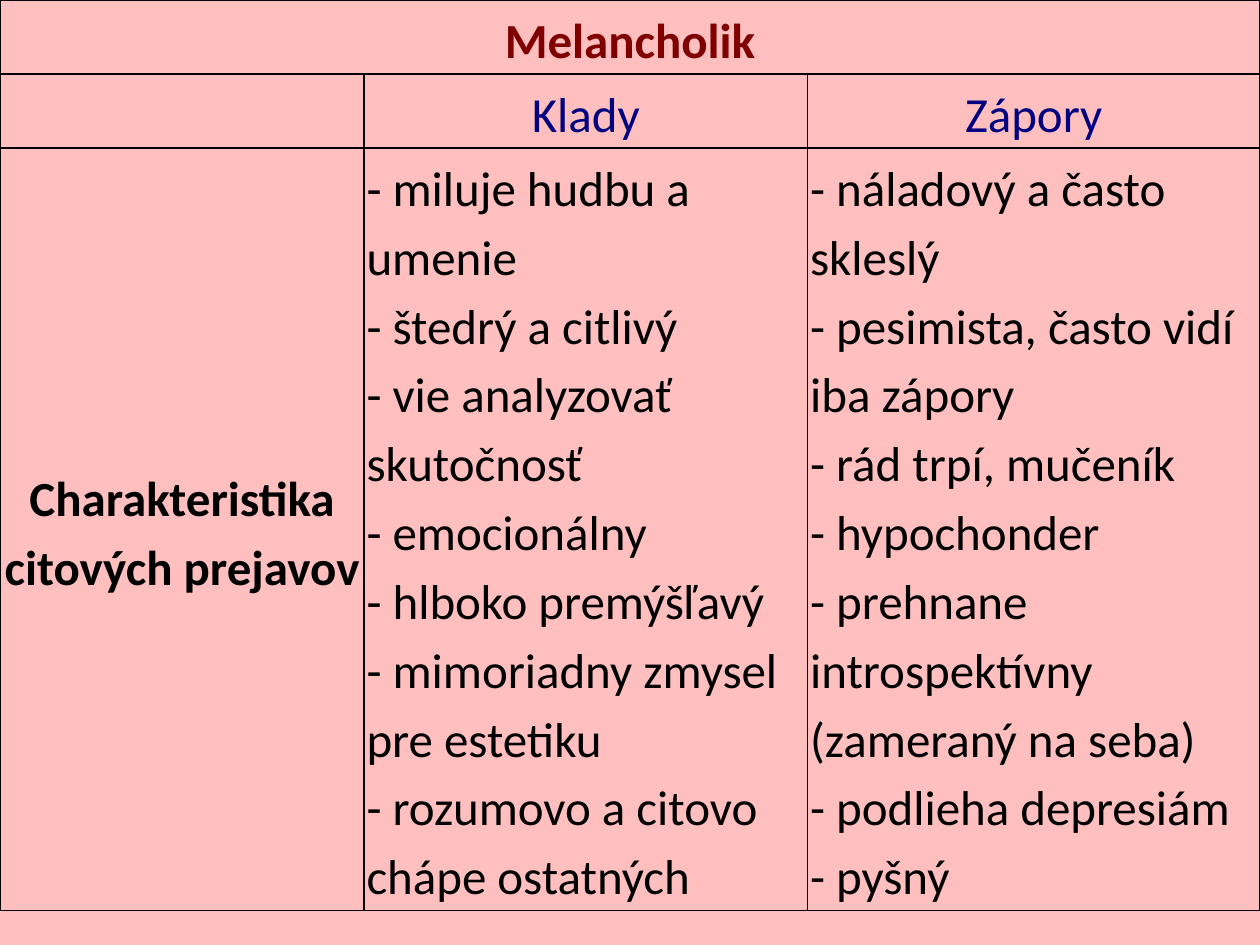
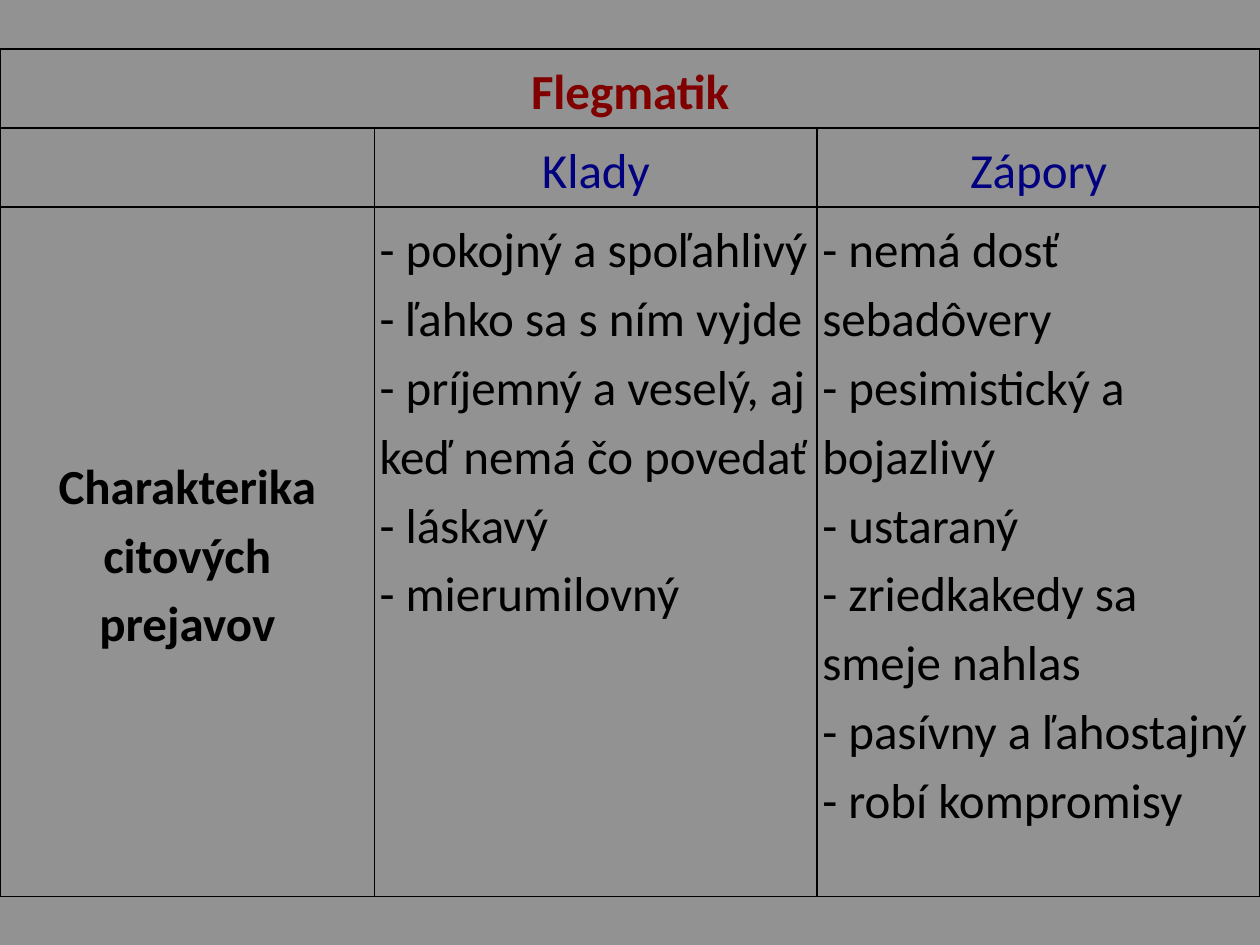
from dataclasses import dataclass

from pptx import Presentation
from pptx.dml.color import RGBColor
from pptx.enum.text import MSO_ANCHOR, PP_ALIGN
from pptx.oxml import parse_xml
from pptx.oxml.ns import nsdecls
from pptx.util import Pt


@dataclass(frozen=True)
class Theme:
    font: str = "Calibri"
    size: int = 28
    title: str = "800000"
    head: str = "000080"
    ink: str = "000000"
    line: int = 1
    space: float = 1.15


@dataclass(frozen=True)
class Temper:
    """One temperament: its table text, geometry in points and backdrop."""
    name: str
    label: str
    pros: list[str]
    cons: list[str]
    back: str
    top: float
    inset: float
    cols: tuple[float, ...]
    rows: tuple[float, ...]


THEME = Theme()
WIDE, HIGH = 720, 540

TEMPERS = [
    Temper(
        "Melancholik", "Charakteristika citových prejavov",
        ["miluje hudbu a umenie", "štedrý a citlivý",
         "vie analyzovať skutočnosť", "emocionálny", "hlboko premýšľavý",
         "mimoriadny zmysel pre estetiku",
         "rozumovo a citovo chápe ostatných"],
        ["náladový a často skleslý", "pesimista, často vidí iba zápory",
         "rád trpí, mučeník", "hypochonder",
         "prehnane introspektívny (zameraný na seba)",
         "podlieha depresiám", "pyšný"],
        back="FFBFBF", top=0, inset=1.5,
        cols=(208, 253.5, 258.5), rows=(42.2, 42.2, 435.5)),
    Temper(
        "Flegmatik", "Charakterika citových\vprejavov",
        ["pokojný a spoľahlivý", "ľahko sa s ním vyjde",
         "príjemný a veselý, aj keď nemá čo povedať", "láskavý",
         "mierumilovný"],
        ["nemá dosť sebadôvery", "pesimistický a bojazlivý", "ustaraný",
         "zriedkakedy sa smeje nahlas", "pasívny a ľahostajný",
         "robí kompromisy"],
        back="929292", top=28, inset=2.9,
        cols=(214, 253, 253), rows=(45, 45, 394)),
]


def frame(cell, inset: float) -> None:
    """Give a cell its margins, thin border and empty fill."""
    cell.margin_left = cell.margin_right = Pt(inset)
    cell.margin_top = cell.margin_bottom = Pt(inset)
    props = cell._tc.get_or_add_tcPr()
    for side in "LRTB":
        props.append(parse_xml(
            f'<a:ln{side} {nsdecls("a")} w="{Pt(THEME.line)}"><a:solidFill>'
            f'<a:srgbClr val="{THEME.ink}"/></a:solidFill></a:ln{side}>'))
    cell.fill.background()


def write(cell, text: str, color: str, bold: bool = False,
          center: bool = True) -> None:
    cell.text = text
    cell.vertical_anchor = MSO_ANCHOR.MIDDLE if center else MSO_ANCHOR.TOP
    for para in cell.text_frame.paragraphs:
        para.alignment = PP_ALIGN.CENTER if center else PP_ALIGN.LEFT
        para.line_spacing = THEME.space
        font = para.font
        font.name, font.size, font.bold = THEME.font, Pt(THEME.size), bold
        font.color.rgb = RGBColor.from_string(color)


def listing(items: list[str]) -> str:
    return "\n".join(f"- {item}" for item in items)


def draw(deck, temper: Temper) -> None:
    slide = deck.slides.add_slide(deck.slide_layouts.get_by_name("Blank"))
    back = slide.background.fill
    back.solid()
    back.fore_color.rgb = RGBColor.from_string(temper.back)

    table = slide.shapes.add_table(
        len(temper.rows), len(temper.cols), 0, Pt(temper.top),
        Pt(WIDE), Pt(sum(temper.rows))).table
    table.first_row = table.horz_banding = False
    for col, width in zip(table.columns, temper.cols):
        col.width = Pt(width)
    for row, height in zip(table.rows, temper.rows):
        row.height = Pt(height)
    for cell in table.iter_cells():
        frame(cell, temper.inset)

    table.cell(0, 0).merge(table.cell(0, 2))
    write(table.cell(0, 0), temper.name, THEME.title, bold=True)
    write(table.cell(2, 0), temper.label, THEME.ink, bold=True)
    sides = [("Klady", temper.pros), ("Zápory", temper.cons)]
    for col, (head, items) in enumerate(sides, 1):
        write(table.cell(1, col), head, THEME.head)
        write(table.cell(2, col), listing(items), THEME.ink, center=False)


def main() -> None:
    deck = Presentation()
    deck.slide_width, deck.slide_height = Pt(WIDE), Pt(HIGH)
    for temper in TEMPERS:
        draw(deck, temper)
    deck.save("out.pptx")


if __name__ == "__main__":
    main()
